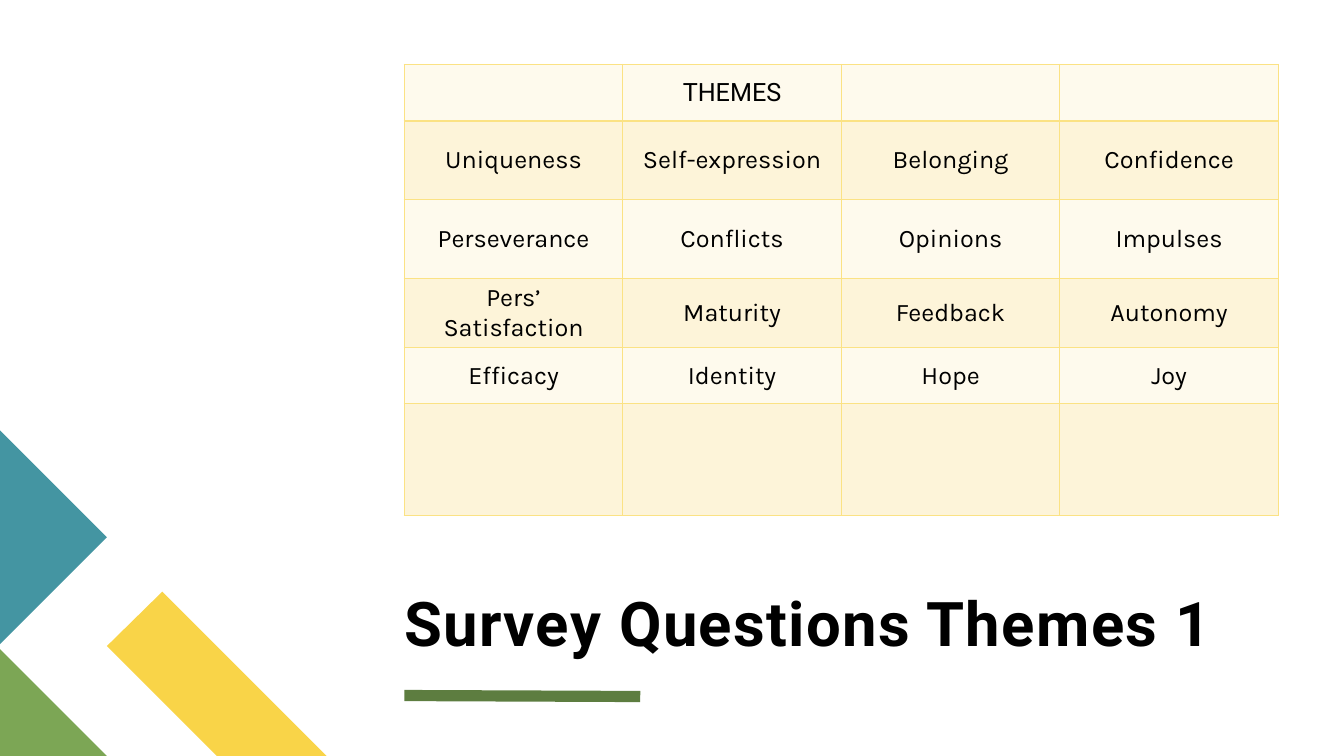
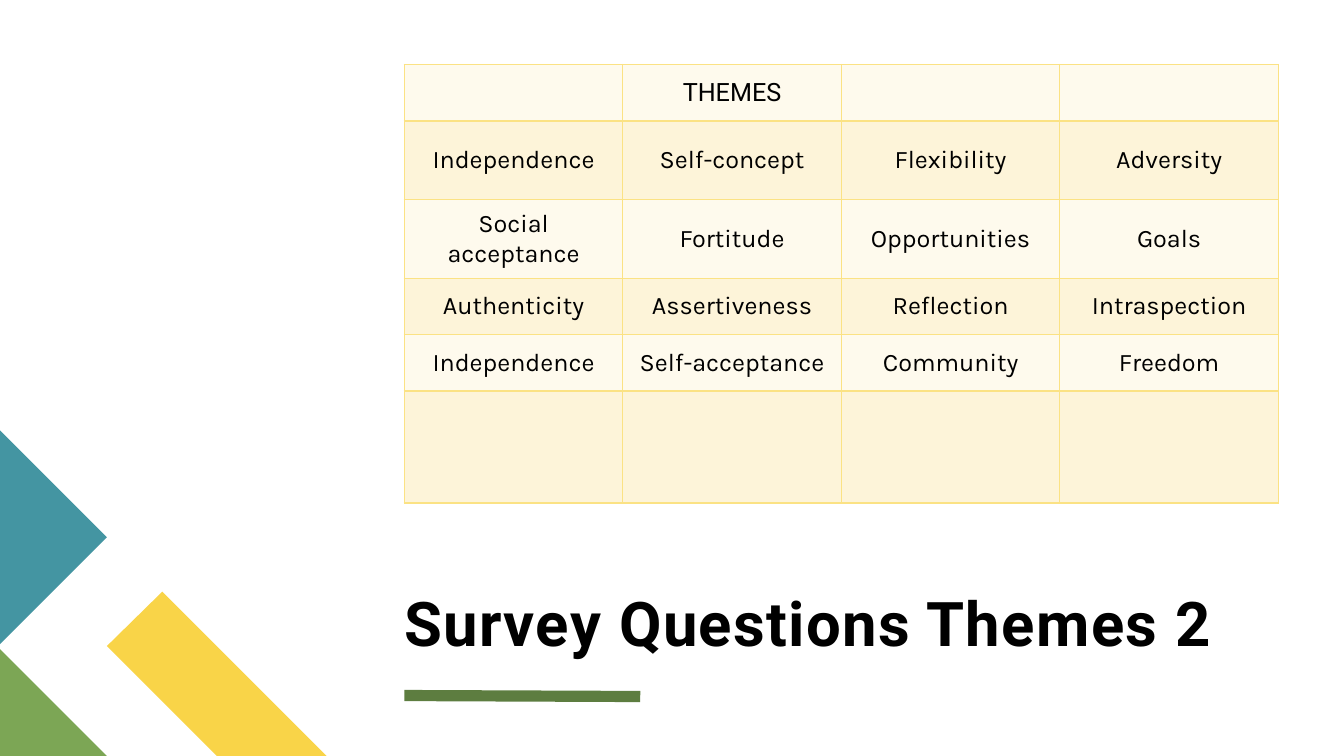
import pptx
import pptx.util
import pptx.dml.color
import pptx.enum.shapes
import pptx.enum.text
import pptx.oxml
import pptx.oxml.ns
import lxml.etree

Inches = pptx.util.Inches
Pt = pptx.util.Pt
RGBColor = pptx.dml.color.RGBColor
qn = pptx.oxml.ns.qn

YELLOW = RGBColor(0xF9, 0xD4, 0x48)
LEAF = RGBColor(0x7C, 0xA6, 0x55)
TEAL = RGBColor(0x44, 0x95, 0xA2)
MOSS = RGBColor(0x5D, 0x7D, 0x40)
BLACK = RGBColor(0, 0, 0)
ROW_FILLS = (RGBColor(0xFE, 0xFA, 0xED), RGBColor(0xFD, 0xF4, 0xD9))
GRID = RGBColor(0xFB, 0xE2, 0x84)

CORNER_SHAPES = [
    (YELLOW, [(3.24, 7.5), (2.15, 7.5), (1.06, 6.41), (1.61, 5.87)]),
    (LEAF, [(1.06, 7.5), (0, 7.5), (0, 6.44)]),
    (TEAL, [(0, 4.27), (1.06, 5.33), (0, 6.39)]),
]
ROW_HEIGHTS = (0.56, 0.78, 0.78, 0.56, 0.56, 1.11)
HEADER = ("", "THEMES", "", "")
EMPTY_ROW = ("",) * 4

THEME_SLIDES = {
    "Survey Questions Themes 1": [
        ("Uniqueness", "Self-expression", "Belonging", "Confidence"),
        ("Perseverance", "Conflicts", "Opinions", "Impulses"),
        ("Pers’ Satisfaction", "Maturity", "Feedback", "Autonomy"),
        ("Efficacy", "Identity", "Hope", "Joy"),
    ],
    "Survey Questions Themes 2": [
        ("Independence", "Self-concept", "Flexibility", "Adversity"),
        ("Social acceptance", "Fortitude", "Opportunities", "Goals"),
        ("Authenticity", "Assertiveness", "Reflection", "Intraspection"),
        ("Independence", "Self-acceptance", "Community", "Freedom"),
    ],
}


class SurveyDeck:
    heading_font = "Roboto"
    body_font = "Karla"
    left = Inches(4.01)
    width = Inches(8.67)

    def __init__(self):
        self.deck = pptx.Presentation()
        self.deck.slide_width = Inches(13.33)
        self.deck.slide_height = Inches(7.5)
        self.slide = None

    def new_slide(self):
        self.slide = self.deck.slides.add_slide(self.deck.slide_layouts[6])
        for color, points in CORNER_SHAPES:
            self.polygon(color, points)
        self.underline()

    def polygon(self, color, points):
        corners = [(Inches(x), Inches(y)) for x, y in points]
        builder = self.slide.shapes.build_freeform(*corners[0])
        builder.add_line_segments(corners[1:], close=True)
        outline = builder.convert_to_shape()
        outline.shadow.inherit = False
        outline.fill.solid()
        outline.fill.fore_color.rgb = color
        outline.line.fill.background()

    def underline(self):
        rule = self.slide.shapes.add_connector(
            pptx.enum.shapes.MSO_CONNECTOR.STRAIGHT,
            self.left, Inches(6.9), Inches(6.35), Inches(6.91))
        rule.line.color.rgb = MOSS
        rule.line.width = Pt(8)
        lxml.etree.SubElement(rule._element.spPr, qn("a:effectLst"))

    def style_run(self, run, font_name, size, bold=False):
        run.font.name = font_name
        run.font.size = Pt(size)
        run.font.bold = bold
        run.font.color.rgb = BLACK

    def title(self, text):
        box = self.slide.shapes.add_textbox(
            self.left, Inches(5.83), self.width, Inches(0.7))
        frame = box.text_frame
        frame.word_wrap = True
        frame.margin_left = frame.margin_right = 0
        frame.margin_top = frame.margin_bottom = 0
        frame.vertical_anchor = pptx.enum.text.MSO_ANCHOR.BOTTOM
        frame.text = text
        paragraph = frame.paragraphs[0]
        paragraph.line_spacing = 0.8
        run = paragraph.runs[0]
        self.style_run(run, self.heading_font, 44, bold=True)
        run.font._element.set("spc", "100")

    def cell_borders(self, cell):
        properties = cell._tc.get_or_add_tcPr()
        for position, side in enumerate(("lnL", "lnR", "lnT", "lnB")):
            border = lxml.etree.Element(qn(f"a:{side}"), w=str(Pt(1)))
            fill = lxml.etree.SubElement(border, qn("a:solidFill"))
            lxml.etree.SubElement(fill, qn("a:srgbClr"), val=str(GRID))
            properties.insert(position, border)

    def theme_cell(self, cell, text, font_name, fill_color):
        cell.vertical_anchor = pptx.enum.text.MSO_ANCHOR.MIDDLE
        cell.fill.solid()
        cell.fill.fore_color.rgb = fill_color
        self.cell_borders(cell)
        if text:
            cell.text_frame.text = text
            paragraph = cell.text_frame.paragraphs[0]
            paragraph.alignment = pptx.enum.text.PP_ALIGN.CENTER
            self.style_run(paragraph.runs[0], font_name, 18)

    def theme_table(self, themes):
        rows = [HEADER, *themes, EMPTY_ROW]
        table = self.slide.shapes.add_table(
            len(rows), len(HEADER), self.left, Inches(0.64),
            self.width, Inches(sum(ROW_HEIGHTS))).table
        table.first_row = False
        table.horz_banding = False
        for r, (texts, height) in enumerate(zip(rows, ROW_HEIGHTS)):
            table.rows[r].height = Inches(height)
            font_name = self.body_font if r else self.heading_font
            for c, text in enumerate(texts):
                self.theme_cell(table.cell(r, c), text, font_name, ROW_FILLS[r % 2])

    def save(self):
        self.deck.save("out.pptx")


def main():
    survey = SurveyDeck()
    for heading, themes in THEME_SLIDES.items():
        survey.new_slide()
        survey.theme_table(themes)
        survey.title(heading)
    survey.save()


if __name__ == "__main__":
    main()
